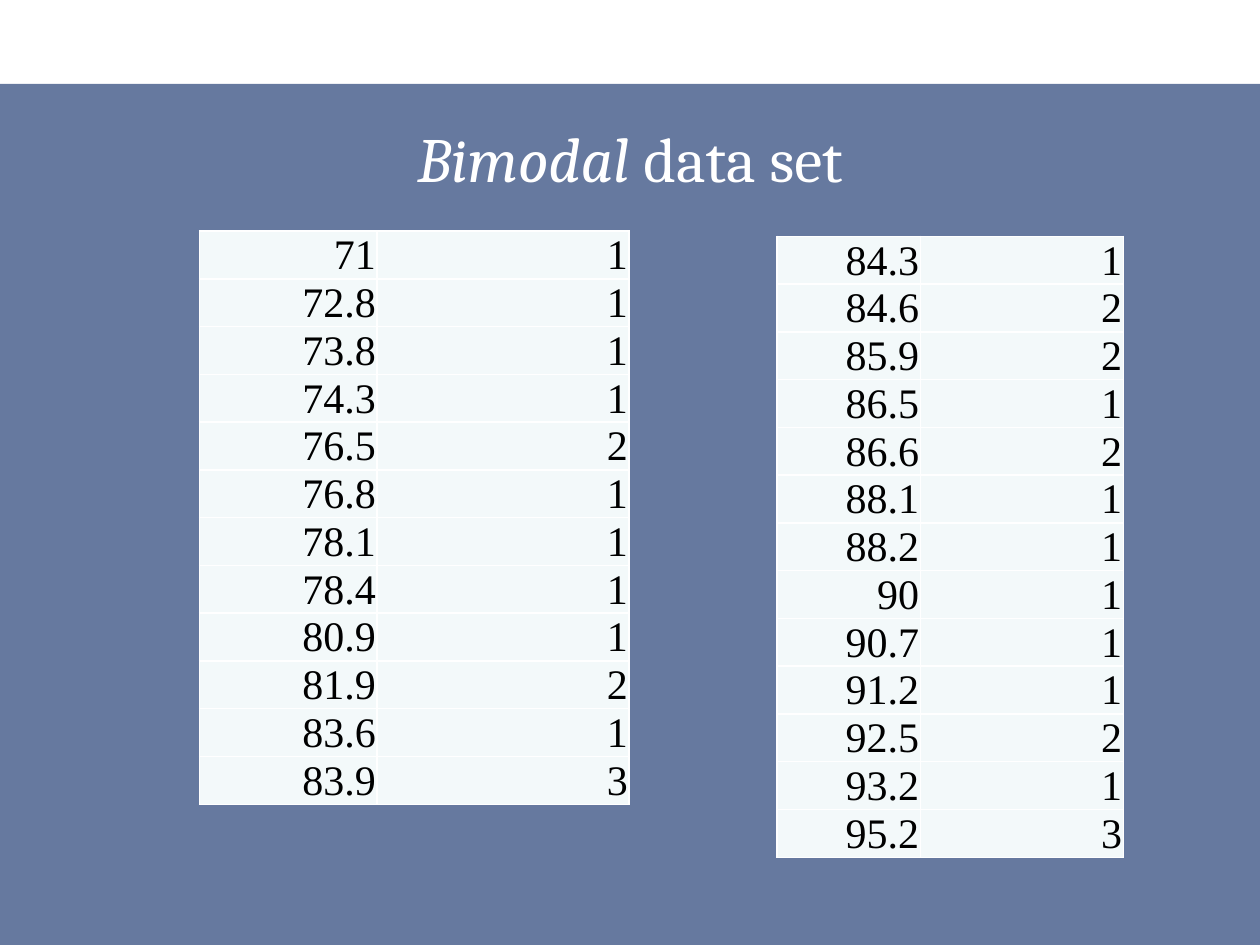
from lxml.etree import SubElement
from pptx import Presentation
from pptx.dml.color import RGBColor
from pptx.enum.shapes import MSO_SHAPE
from pptx.enum.text import MSO_ANCHOR, PP_ALIGN
from pptx.oxml.ns import qn
from pptx.util import Pt

WHITE = RGBColor(0xFF, 0xFF, 0xFF)
BLACK = RGBColor(0x00, 0x00, 0x00)
NAVY = RGBColor(0x00, 0x20, 0x60)
PALE = RGBColor(0xF3, 0xF9, 0xFA)

TITLE_FONT = {"name": "Cambria", "size": Pt(36)}
CELL_FONT = {"name": "Times New Roman", "size": Pt(24), "bold": False}
CELL_FORMAT = {
    "vertical_anchor": MSO_ANCHOR.BOTTOM,
    "margin_left": Pt(0.75),
    "margin_right": Pt(0.75),
    "margin_top": Pt(0.75),
    "margin_bottom": Pt(0),
}
ROW_HEIGHT = 27.25

TABLES = [
    {
        "left": 114, "top": 132, "widths": (101.5, 144),
        "rows": [("71", 1), ("72.8", 1), ("73.8", 1), ("74.3", 1),
                 ("76.5", 2), ("76.8", 1), ("78.1", 1), ("78.4", 1),
                 ("80.9", 1), ("81.9", 2), ("83.6", 1), ("83.9", 3)],
    },
    {
        "left": 444, "top": 135, "widths": (82, 116),
        "rows": [("84.3", 1), ("84.6", 2), ("85.9", 2), ("86.5", 1),
                 ("86.6", 2), ("88.1", 1), ("88.2", 1), ("90", 1),
                 ("90.7", 1), ("91.2", 1), ("92.5", 2), ("93.2", 1),
                 ("95.2", 3)],
    },
]


def set_format(target, values):
    for name, value in values.items():
        setattr(target, name, value)


def add_borders(cell, color):
    properties = cell._tc.get_or_add_tcPr()
    for side in ("a:lnL", "a:lnR", "a:lnT", "a:lnB"):
        line = SubElement(properties, qn(side), w=str(Pt(1)))
        fill = SubElement(line, qn("a:solidFill"))
        SubElement(fill, qn("a:srgbClr"), val=str(color))


presentation = Presentation()
presentation.slide_width = Pt(720)
presentation.slide_height = Pt(540)
slide = presentation.slides.add_slide(presentation.slide_layouts[5])

panel = slide.shapes.add_shape(MSO_SHAPE.RECTANGLE, Pt(0), Pt(48), Pt(720), Pt(492))
panel.shadow.inherit = False
panel.fill.solid()
panel.fill.fore_color.rgb = NAVY
panel_color = panel._element.spPr.find(qn("a:solidFill")).find(qn("a:srgbClr"))
SubElement(panel_color, qn("a:alpha"), val="60000")
panel.line.fill.background()
slide.shapes._spTree.insert(2, panel._element)

title = slide.shapes.title
set_format(title, {"left": Pt(18), "top": Pt(60), "width": Pt(684), "height": Pt(60)})
title.text_frame.vertical_anchor = MSO_ANCHOR.MIDDLE
paragraph = title.text_frame.paragraphs[0]
paragraph.alignment = PP_ALIGN.CENTER
for text, italic in (("Bimodal", True), (" data set", False)):
    run = paragraph.add_run()
    run.text = text
    set_format(run.font, TITLE_FONT)
    run.font.italic = italic
    run.font.color.rgb = WHITE

for data in TABLES:
    rows, widths = data["rows"], data["widths"]
    table = slide.shapes.add_table(
        len(rows), len(widths), Pt(data["left"]), Pt(data["top"]),
        Pt(sum(widths)), Pt(ROW_HEIGHT * len(rows))).table
    set_format(table, {"first_row": False, "horz_banding": False})
    for column, width in zip(table.columns, widths):
        column.width = Pt(width)
    for row, values in zip(table.rows, rows):
        row.height = Pt(ROW_HEIGHT)
        for cell, value in zip(row.cells, values):
            set_format(cell, CELL_FORMAT)
            add_borders(cell, WHITE)
            cell.fill.solid()
            cell.fill.fore_color.rgb = PALE
            paragraph = cell.text_frame.paragraphs[0]
            paragraph.alignment = PP_ALIGN.RIGHT
            run = paragraph.add_run()
            run.text = str(value)
            set_format(run.font, CELL_FONT)
            run.font.color.rgb = BLACK

presentation.save("out.pptx")
